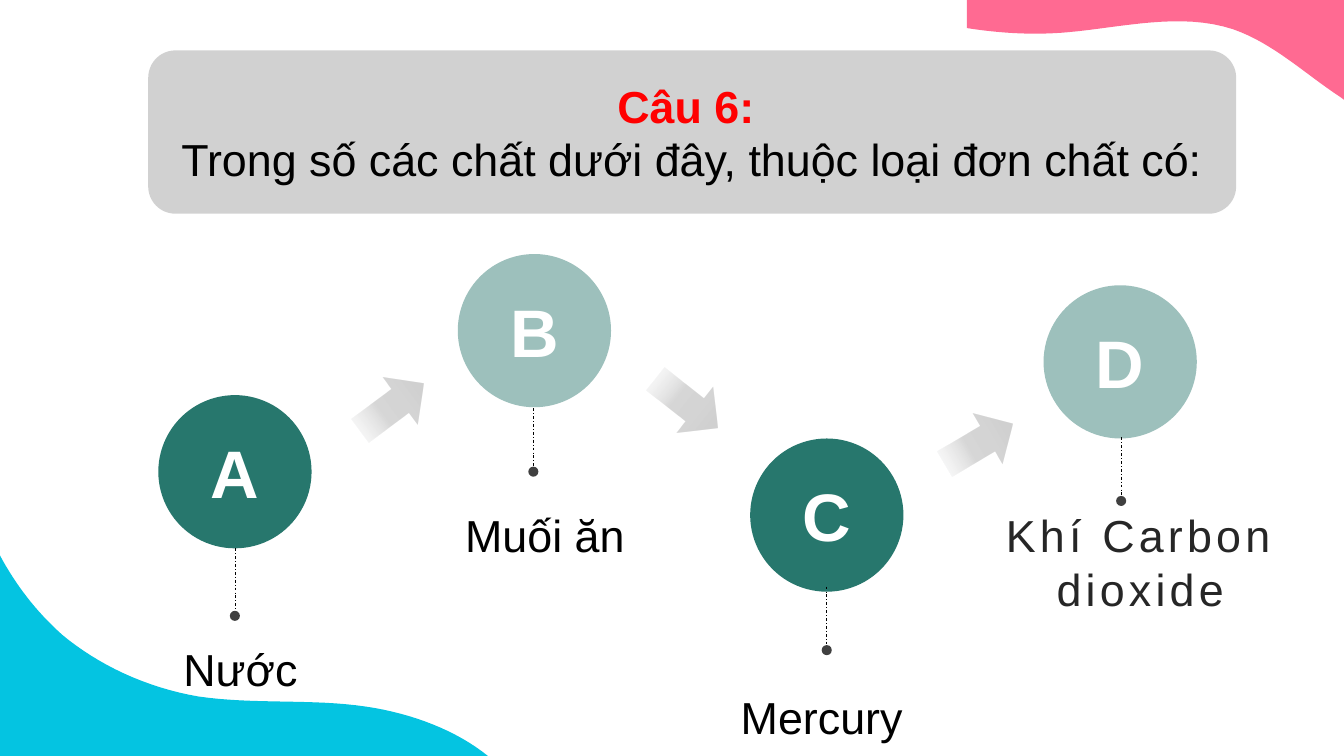
from dataclasses import dataclass

from lxml import etree
from pptx import Presentation
from pptx.dml.color import RGBColor
from pptx.enum.dml import MSO_LINE
from pptx.enum.shapes import MSO_CONNECTOR, MSO_SHAPE
from pptx.enum.text import MSO_ANCHOR, PP_ALIGN
from pptx.oxml.ns import qn
from pptx.util import Emu, Pt

ELLIPSE = MSO_SHAPE.OVAL
ARROW = MSO_SHAPE.RIGHT_ARROW
ROUNDED = MSO_SHAPE.ROUNDED_RECTANGLE
STRAIGHT = MSO_CONNECTOR.STRAIGHT
DASH_DOT = MSO_LINE.DASH_DOT
CENTER = PP_ALIGN.CENTER
MIDDLE = MSO_ANCHOR.MIDDLE

EMU_PER_PX = 9144  # 100 px to the inch
FONT = "Arial"
TEAL, PALE_TEAL = "27776D", "9DC0BC"
BLACK, CHARCOAL, WHITE, RED = "000000", "262626", "FFFFFF", "FF0000"
CIRCLE, DOT, STEM = 152, 10, 63
ARROW_SIZE = (78, 58)
# position in percent, colour, opacity in percent
ARROW_STOPS = [(0, "F7FAFD", 0), (42, CHARCOAL, 18), (76, CHARCOAL, 21), (100, CHARCOAL, 16)]

Box = tuple[int, int, int, int]
Point = tuple[float, float]


@dataclass
class Option:
    letter: str
    color: str
    left: int
    top: int
    stem_x: int
    stem_top: int
    dot_top: int
    label: str
    label_box: Box
    label_color: str = BLACK
    spacing: int = 0


@dataclass
class Wave:
    color: str
    start: Point
    corners: list[Point]
    curves: list[tuple[Point, Point, Point]]


OPTIONS = [
    Option("A", TEAL, 157, 392, 233, 544, 606, "Nước", (141, 632, 195, 64)),
    Option("B", PALE_TEAL, 454, 252, 529, 405, 463, "Muối ăn", (443, 499, 195, 64)),
    Option("C", TEAL, 744, 435, 820, 582, 640, "Mercury", (688, 679, 254, 64)),
    Option("D", PALE_TEAL, 1035, 283, 1112, 434, 492, "Khí Carbon dioxide",
           (984, 499, 294, 118), CHARCOAL, 3),
]
ARROWS = [(350, 375, 323.5), (642, 371, 38.3), (932, 411, 329.5)]  # left, top, rotation
WAVES = [
    Wave("FF6A92", (959, 28), [(959, 0), (1333, 0), (1333, 99), (1329, 96)],
         [((1294, 73), (1263, 43), (1223, 29)), ((1171, 12), (1114, 27), (1059, 32)),
          ((1026, 35), (992, 33), (960, 28))]),
    Wave("04C4E1", (0, 750), [(0, 551)],
         [((15, 579), (35, 606), (62, 630)), ((97, 659), (144, 682), (197, 691)),
          ((252, 699), (309, 693), (363, 701)), ((410, 708), (453, 725), (484, 750))]),
]


def px(value: float) -> Emu:
    return Emu(round(value * EMU_PER_PX))


def rgb(color: str) -> RGBColor:
    return RGBColor.from_string(color)


def set_alpha(color_element, percent: int) -> None:
    etree.SubElement(color_element, qn("a:alpha")).set("val", str(percent * 1000))


def style(shape, color: str):
    shape.shadow.inherit = False
    shape.fill.solid()
    shape.fill.fore_color.rgb = rgb(color)
    shape.line.fill.background()
    return shape


def add_shape(slide, kind, box: Box, color: str):
    return style(slide.shapes.add_shape(kind, *map(px, box)), color)


def add_text(paragraph, text: str, *, size: int = 32, color: str = BLACK,
             bold: bool = False, spacing: int = 0) -> None:
    paragraph.alignment = CENTER
    run = paragraph.add_run()
    run.text = text
    run.font.name = FONT
    run.font.size = Pt(size)
    run.font.bold = bold
    run.font.color.rgb = rgb(color)
    if spacing:
        run.font._element.set("spc", str(spacing * 100))


def add_question(slide) -> None:
    box = (147, 50, 1079, 162)
    panel = add_shape(slide, ROUNDED, box, "A5A5A5")
    set_alpha(panel._element.spPr.find(".//" + qn("a:srgbClr")), 50)
    title = slide.shapes.title
    title.left, title.top, title.width, title.height = map(px, box)
    panel._element.addnext(title._element)  # title in front of its panel
    frame = title.text_frame
    frame.word_wrap = True
    frame.vertical_anchor = MIDDLE
    add_text(frame.paragraphs[0], "Câu 6: ", color=RED, bold=True)
    add_text(frame.add_paragraph(), "Trong số các chất dưới đây, thuộc loại đơn chất có:")


def add_option(slide, option: Option) -> None:
    circle = add_shape(slide, ELLIPSE, (option.left, option.top, CIRCLE, CIRCLE), option.color)
    circle.text_frame.vertical_anchor = MIDDLE
    add_text(circle.text_frame.paragraphs[0], option.letter, size=48, color=WHITE, bold=True)

    stem = slide.shapes.add_connector(
        STRAIGHT, px(option.stem_x), px(option.stem_top),
        px(option.stem_x), px(option.stem_top + STEM))
    stem.line.color.rgb = rgb(BLACK)
    stem.line.width = Pt(0.5)
    stem.line.dash_style = DASH_DOT
    etree.SubElement(stem._element.spPr, qn("a:effectLst"))
    add_shape(slide, ELLIPSE, (option.stem_x - DOT // 2, option.dot_top, DOT, DOT), "404040")

    label = slide.shapes.add_textbox(*map(px, option.label_box))
    label.text_frame.word_wrap = True
    add_text(label.text_frame.paragraphs[0], option.label,
             color=option.label_color, spacing=option.spacing)


def add_arrow(slide, left: int, top: int, rotation: float) -> None:
    arrow = add_shape(slide, ARROW, (left, top, *ARROW_SIZE), CHARCOAL)
    arrow.rotation = rotation
    arrow.fill.gradient()
    arrow.fill.gradient_angle = 0
    stops = arrow._element.spPr.find(".//" + qn("a:gsLst"))
    for stop in list(stops):
        stops.remove(stop)
    for position, color, alpha in ARROW_STOPS:
        stop = etree.SubElement(stops, qn("a:gs"))
        stop.set("pos", str(position * 1000))
        color_element = etree.SubElement(stop, qn("a:srgbClr"))
        color_element.set("val", color)
        set_alpha(color_element, alpha)


def curve_points(start: Point, first: Point, second: Point, end: Point,
                 steps: int = 16) -> list[Point]:
    points = []
    for step in range(1, steps + 1):
        t = step / steps
        u = 1 - t
        weights = (u**3, 3 * u * u * t, 3 * u * t * t, t**3)
        controls = (start, first, second, end)
        points.append((sum(w * x for w, (x, _) in zip(weights, controls)),
                       sum(w * y for w, (_, y) in zip(weights, controls))))
    return points


def add_wave(slide, wave: Wave) -> None:
    points = list(wave.corners)
    for curve in wave.curves:
        points += curve_points(points[-1], *curve)
    builder = slide.shapes.build_freeform(*map(px, wave.start))
    builder.add_line_segments([(px(x), px(y)) for x, y in points], close=True)
    style(builder.convert_to_shape(), wave.color)


def main() -> None:
    presentation = Presentation()
    presentation.slide_width = px(1333)
    presentation.slide_height = px(750)
    slide = presentation.slides.add_slide(presentation.slide_layouts[5])  # title only

    # Answers and the arrows between them
    for option in OPTIONS:
        add_option(slide, option)
    for arrow in ARROWS:
        add_arrow(slide, *arrow)

    # Question and corner waves
    add_question(slide)
    for wave in WAVES:
        add_wave(slide, wave)

    presentation.save("out.pptx")


if __name__ == "__main__":
    main()
